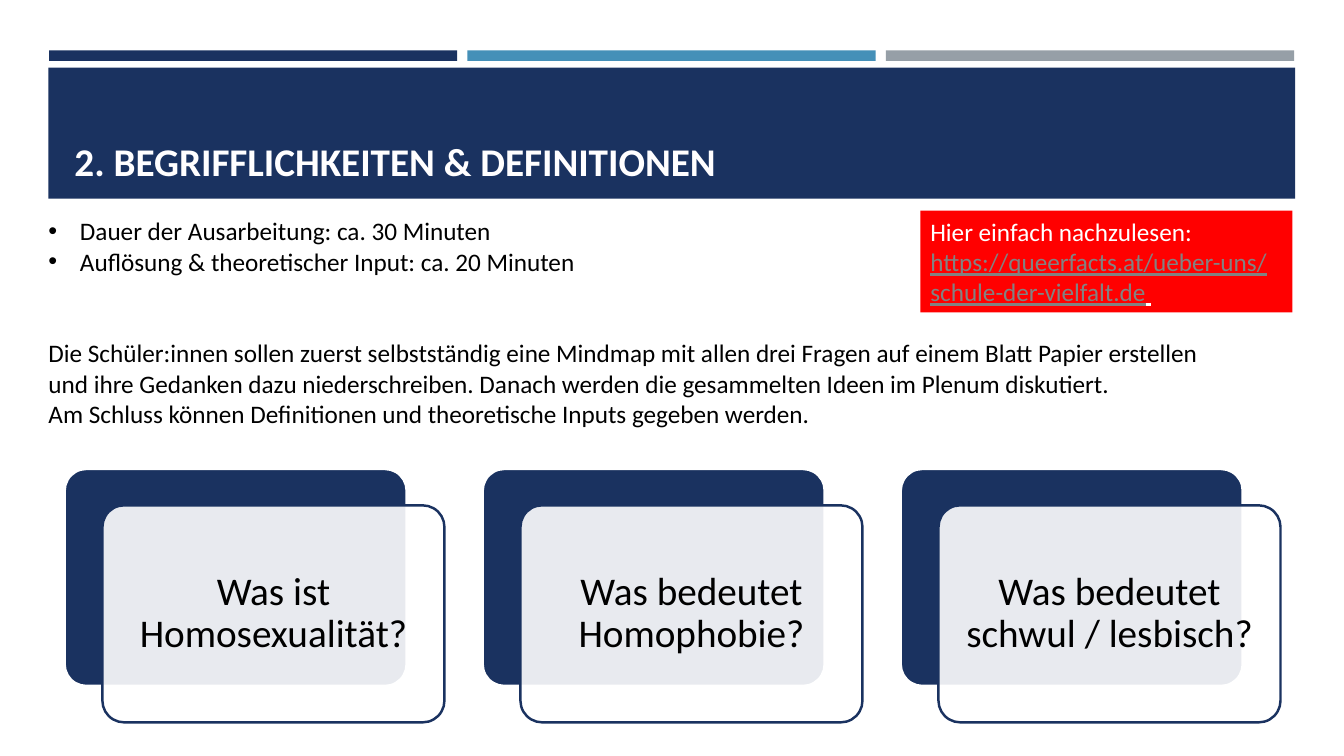
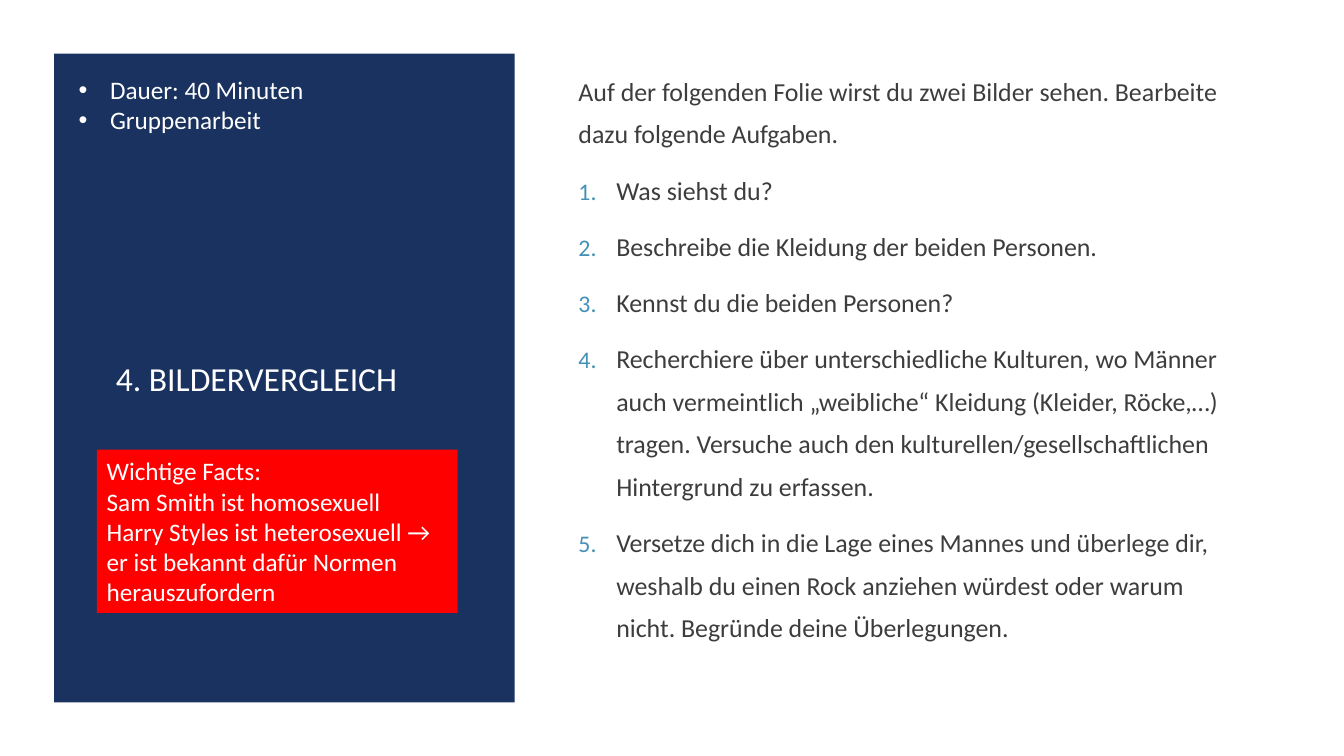
import pptx
import pptx.dml.color
import pptx.enum.shapes
import pptx.enum.text
import pptx.oxml.ns
import pptx.util
from lxml import etree

Pt = pptx.util.Pt
RGB = pptx.dml.color.RGBColor.from_string
ANCHOR = pptx.enum.text.MSO_ANCHOR
ALIGN = pptx.enum.text.PP_ALIGN
PRESET = pptx.enum.shapes.MSO_SHAPE
qn = pptx.oxml.ns.qn


class Theme:
    font = "Calibri"
    navy, blue, grey = RGB("1A3260"), RGB("4590B8"), RGB("969FA7")
    white, black, red = RGB("FFFFFF"), RGB("000000"), RGB("FF0000")
    title_white, body_grey, link = RGB("FFFEFF"), RGB("3D3D3D"), RGB("828282")
    title_size, side_title_size, card_size = 28, 24, 28
    text_size, task_size = 18, 18.5


def add_panel(slide, box, fill, outline=None, preset=PRESET.RECTANGLE):
    """Add a filled shape; box is left, top, width, height in points."""
    panel = slide.shapes.add_shape(preset, *map(Pt, box))
    panel.shadow.inherit = False
    panel.fill.solid()
    panel.fill.fore_color.rgb = fill
    if outline is None:
        panel.line.fill.background()
    else:
        panel.line.color.rgb = outline
        panel.line.width = Pt(1.75)
    panel.text_frame.word_wrap = True
    return panel


def add_line(frame, text, color, size=Theme.text_size, marker=None, indent=0):
    """Write one paragraph; marker is None, a bullet character or "1."."""
    first = frame.paragraphs[0]
    line = frame.add_paragraph() if first.runs else first
    props = line._p.get_or_add_pPr()
    props.set("marL", str(Pt(indent)))
    props.set("indent", str(-Pt(indent)))
    if marker is None:
        etree.SubElement(props, qn("a:buNone"))
    elif marker == "1.":
        bullet_color = etree.SubElement(props, qn("a:buClr"))
        etree.SubElement(bullet_color, qn("a:srgbClr"), val=str(Theme.blue))
        etree.SubElement(props, qn("a:buSzPct"), val="92000")
        etree.SubElement(props, qn("a:buFont"), typeface=Theme.font)
        etree.SubElement(props, qn("a:buAutoNum"), type="arabicPeriod")
    else:
        etree.SubElement(props, qn("a:buFont"), typeface="Arial")
        etree.SubElement(props, qn("a:buChar"), char=marker)
    line.alignment = ALIGN.LEFT
    line.space_before = line.space_after = Pt(0)
    run = line.add_run()
    run.text = text
    run.font.name = Theme.font
    run.font.size = Pt(size)
    run.font.color.rgb = color
    return line


deck = pptx.Presentation()
deck.slide_width, deck.slide_height = Pt(960), Pt(540)
terms = deck.slides.add_slide(deck.slide_layouts[1])
comparison = deck.slides.add_slide(deck.slide_layouts[1])

# Bands and side panel
for column, color in enumerate((Theme.navy, Theme.blue, Theme.grey)):
    add_panel(terms, (35 + column * 298.9, 36, 291.6, 7.5), color)
add_panel(terms, (34.6, 48.4, 890.6, 93.6), Theme.navy)
add_panel(comparison, (38.7, 38.3, 329, 463.5), Theme.navy)

# Titles, in front of their bands
for slide, heading, box, size, color, bold, anchor in (
    (terms, "2. BEGRIFFLICHKEITEN & DEFINITIONEN", (46, 55.5, 868, 80),
     Theme.title_size, Theme.title_white, True, ANCHOR.BOTTOM),
    (comparison, "4. BILDERVERGLEICH", (75.6, 88, 258, 364),
     Theme.side_title_size, Theme.white, False, ANCHOR.MIDDLE),
):
    title = slide.shapes.title
    title.left, title.top, title.width, title.height = map(Pt, box)
    title.text_frame.auto_size = pptx.enum.text.MSO_AUTO_SIZE.NONE
    title.text_frame.vertical_anchor = anchor
    add_line(title.text_frame, heading, color, size).runs[0].font.bold = bold
    title.element.getparent().append(title.element)

# Body placeholders
for slide, box in ((terms, (27.4, 150.5, 870, 181)),
                   (comparison, (406, 42, 481, 460))):
    body = slide.placeholders[1]
    body.left, body.top, body.width, body.height = map(Pt, box)
    body.text_frame.auto_size = pptx.enum.text.MSO_AUTO_SIZE.NONE
    body.text_frame.vertical_anchor = ANCHOR.TOP

# Terms: timing and instructions
briefing = terms.placeholders[1].text_frame
for text in ("Dauer der Ausarbeitung: ca. 30 Minuten",
             "Auflösung & theoretischer Input: ca. 20 Minuten"):
    add_line(briefing, text, Theme.black, marker="•", indent=22.5)
for number, text in enumerate((
    "Die Schüler:innen sollen zuerst selbstständig eine Mindmap mit allen drei Fragen auf einem Blatt Papier erstellen",
    "und ihre Gedanken dazu niederschreiben. Danach werden die gesammelten Ideen im Plenum diskutiert.",
    "Am Schluss können Definitionen und theoretische Inputs gegeben werden.",
)):
    line = add_line(briefing, text, Theme.black)
    if number == 0:
        line.space_before = Pt(44)

# Terms: further reading
reading = add_panel(terms, (657.4, 150.5, 265.7, 72.7), Theme.red).text_frame
add_line(reading, "Hier einfach nachzulesen:", Theme.white)
for address in ("https://queerfacts.at/ueber-uns/", "schule-der-vielfalt.de"):
    line = add_line(reading, address, Theme.link)
    line.runs[0].font.underline = True
line_end = line.add_run()
line_end.text = " "
line_end.font.name = Theme.font
line_end.font.size = Pt(Theme.text_size)
line_end.font.color.rgb = Theme.white
line_end.font.underline = True

# Terms: question cards
for column, question in enumerate(("Was ist Homosexualität?",
                                   "Was bedeutet Homophobie?",
                                   "Was bedeutet schwul / lesbisch?")):
    left = 46.2 + column * 298.6
    back = add_panel(terms, (left, 335, 244.3, 155), Theme.navy,
                     Theme.white, PRESET.ROUNDED_RECTANGLE)
    card = add_panel(terms, (left + 27, 361, 244.3, 155), Theme.white,
                     Theme.navy, PRESET.ROUNDED_RECTANGLE)
    back.adjustments[0] = card.adjustments[0] = 0.1
    card_color = card.fill._xPr.find(qn("a:solidFill"))[0]
    etree.SubElement(card_color, qn("a:alpha"), val="90000")
    frame = card.text_frame
    frame.margin_left = frame.margin_right = Pt(8.4)
    line = add_line(frame, question, Theme.black, Theme.card_size)
    line.alignment = ALIGN.CENTER
    line.line_spacing = 0.9

# Comparison: tasks
tasks = comparison.placeholders[1].text_frame
for number, text in enumerate((
    "Auf der folgenden Folie wirst du zwei Bilder sehen. Bearbeite dazu folgende Aufgaben.",
    "Was siehst du?",
    "Beschreibe die Kleidung der beiden Personen.",
    "Kennst du die beiden Personen?",
    "Recherchiere über unterschiedliche Kulturen, wo Männer auch vermeintlich „weibliche“ Kleidung (Kleider, Röcke,…) tragen. Versuche auch den kulturellen/gesellschaftlichen Hintergrund zu erfassen.",
    "Versetze dich in die Lage eines Mannes und überlege dir, weshalb du einen Rock anziehen würdest oder warum nicht. Begründe deine Überlegungen.",
)):
    marker, indent = ("1.", 27) if number else (None, 0)
    line = add_line(tasks, text, Theme.body_grey, Theme.task_size, marker, indent)
    line.line_spacing = 1.37
    line.space_after = Pt(9.7)

# Comparison: facts
facts = add_panel(comparison, (69.1, 321.2, 257.8, 116.6), Theme.red).text_frame
for text in ("Wichtige Facts:",
             "Sam Smith ist homosexuell",
             "Harry Styles ist heterosexuell → er ist bekannt dafür Normen herauszufordern"):
    add_line(facts, text, Theme.white)

# Comparison: timing
timing = comparison.shapes.add_textbox(Pt(49), Pt(49.7), Pt(181), Pt(51)).text_frame
timing.word_wrap = True
for text in ("Dauer: 40 Minuten", "Gruppenarbeit"):
    add_line(timing, text, Theme.white, marker="•", indent=22.5)

deck.save("out.pptx")
